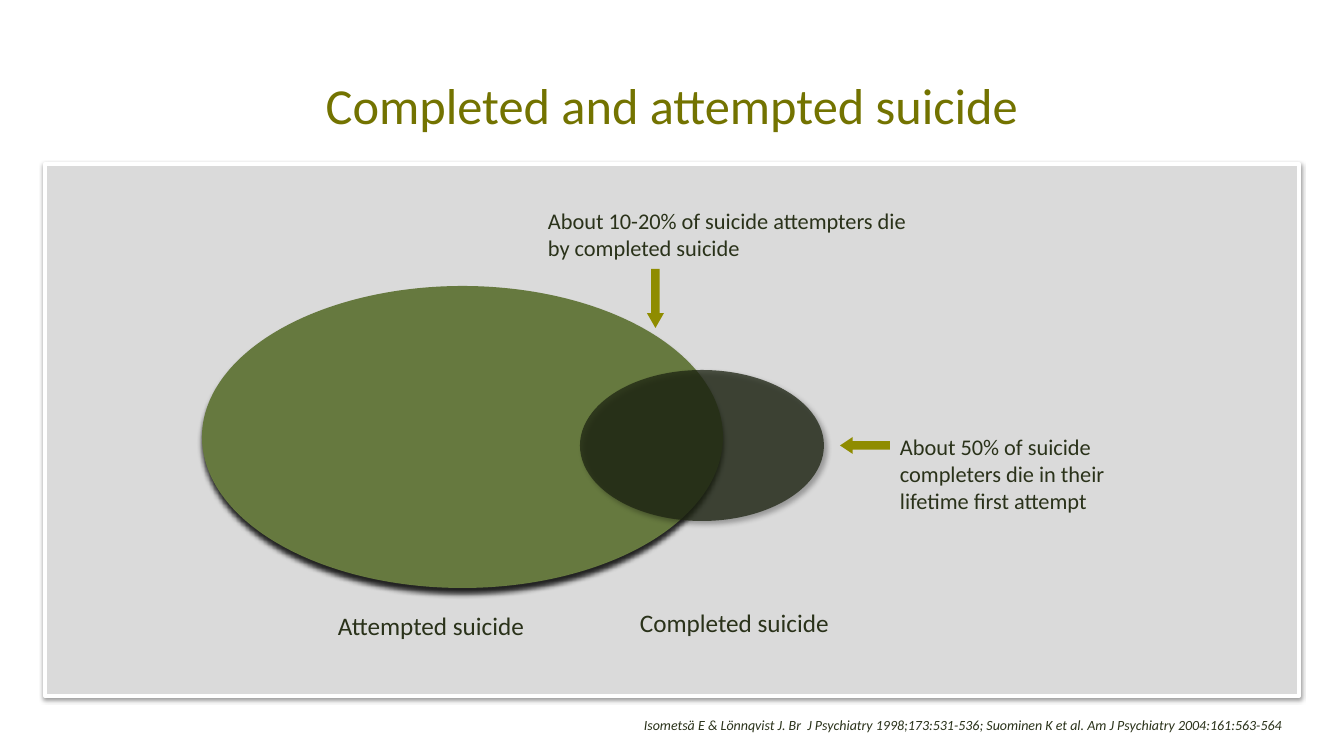
import pptx
import pptx.util
import pptx.oxml
import pptx.oxml.ns
import pptx.dml.color
import pptx.enum.shapes
import pptx.enum.text

PX = 914400 / 100.8
THEME = {
    "font": "Calibri",
    "title": "737300", "text": "2A321A", "panel": "DADADA", "edge": "FFFFFF",
    "tried": "66793F", "died": "1D2412", "arrow": "8F8C00",
    "title_pt": 36, "label_pt": 18, "note_pt": 16, "cite_pt": 10,
}
FORM = pptx.enum.shapes.MSO_SHAPE
RGB = pptx.dml.color.RGBColor.from_string

deck = pptx.Presentation()
deck.slide_width, deck.slide_height = round(1344 * PX), round(756 * PX)
slide = deck.slides.add_slide(deck.slide_layouts[5])


def draw(form, box, fill, shade=None):
    """Add a filled shape; shade is (alpha %, blur pt, distance pt, degrees)."""
    shape = slide.shapes.add_shape(form, *(round(n * PX) for n in box))
    shape.shadow.inherit = False
    shape.fill.solid()
    shape.fill.fore_color.rgb = RGB(THEME[fill])
    shape.line.fill.background()
    if shade:
        alpha, blur, dist, turn = shade
        glow = shape._element.spPr.find(pptx.oxml.ns.qn("a:effectLst"))
        glow.append(pptx.oxml.parse_xml(
            f'<a:outerShdw {pptx.oxml.ns.nsdecls("a")} blurRad="{round(blur * 12700)}"'
            f' dist="{round(dist * 12700)}" dir="{turn * 60000}" algn="ctr" rotWithShape="0">'
            f'<a:srgbClr val="000000"><a:alpha val="{alpha * 1000}"/></a:srgbClr>'
            '</a:outerShdw>'))
    return shape


def write(shape, text, size, color="text", wrap=True):
    frame = shape.text_frame
    frame.text = text
    frame.word_wrap = wrap
    frame.auto_size = pptx.enum.text.MSO_AUTO_SIZE.SHAPE_TO_FIT_TEXT
    frame.vertical_anchor = pptx.enum.text.MSO_ANCHOR.TOP
    para = frame.paragraphs[0]
    para.font.name = THEME["font"]
    para.font.size = pptx.util.Pt(THEME[size])
    para.font.color.rgb = RGB(THEME[color])
    return para


# Title
title = slide.shapes.title
title.left, title.top, title.width, title.height = (
    round(n * PX) for n in (210, 69, 924, 72))
head = write(title, "Completed and attempted suicide", "title_pt", "title")
head.alignment = pptx.enum.text.PP_ALIGN.CENTER

# Panel and the two overlapping groups
panel = draw(FORM.RECTANGLE, (45, 164, 1254, 532), "panel", (38, 3.1, 1.6, 90))
panel.line.color.rgb = RGB(THEME["edge"])
panel.line.width = pptx.util.Pt(3)
draw(FORM.OVAL, (202, 286, 521, 302), "tried", (83, 4, 4, 90))
died = draw(FORM.OVAL, (580, 370, 244, 151), "died", (40, 4, 3, 45))
tint = died._element.spPr.find(pptx.oxml.ns.qn("a:solidFill"))[0]
tint.append(pptx.oxml.parse_xml(
    f'<a:alpha {pptx.oxml.ns.nsdecls("a")} val="75000"/>'))

# Arrows
for form, box, tip in (
    (FORM.LEFT_ARROW, (840, 437, 50, 17), 0.75),
    (FORM.DOWN_ARROW, (647, 269, 17, 59), 0.875),
):
    arrow = draw(form, box, "arrow")
    arrow.adjustments[0] = 0.5
    arrow.adjustments[1] = tip

# Labels, notes and citation
for text, box, size, wrap in (
    ("Attempted suicide", (328, 605, 215, 40), "label_pt", False),
    ("Completed suicide", (630, 602, 215, 40), "label_pt", False),
    ("About 50% of suicide completers die in their lifetime first attempt",
     (890, 428, 286, 92), "note_pt", True),
    ("About 10-20% of suicide attempters die by completed suicide",
     (538, 202, 380, 64), "note_pt", True),
    ("Isometsä E & Lönnqvist J. Br  J Psychiatry 1998;173:531-536; "
     "Suominen K et al. Am J Psychiatry 2004:161:563-564",
     (634, 712, 665, 27), "cite_pt", True),
):
    note = slide.shapes.add_textbox(*(round(n * PX) for n in box))
    para = write(note, text, size, wrap=wrap)
    if size == "cite_pt":
        para.font.italic = True

deck.save("out.pptx")
